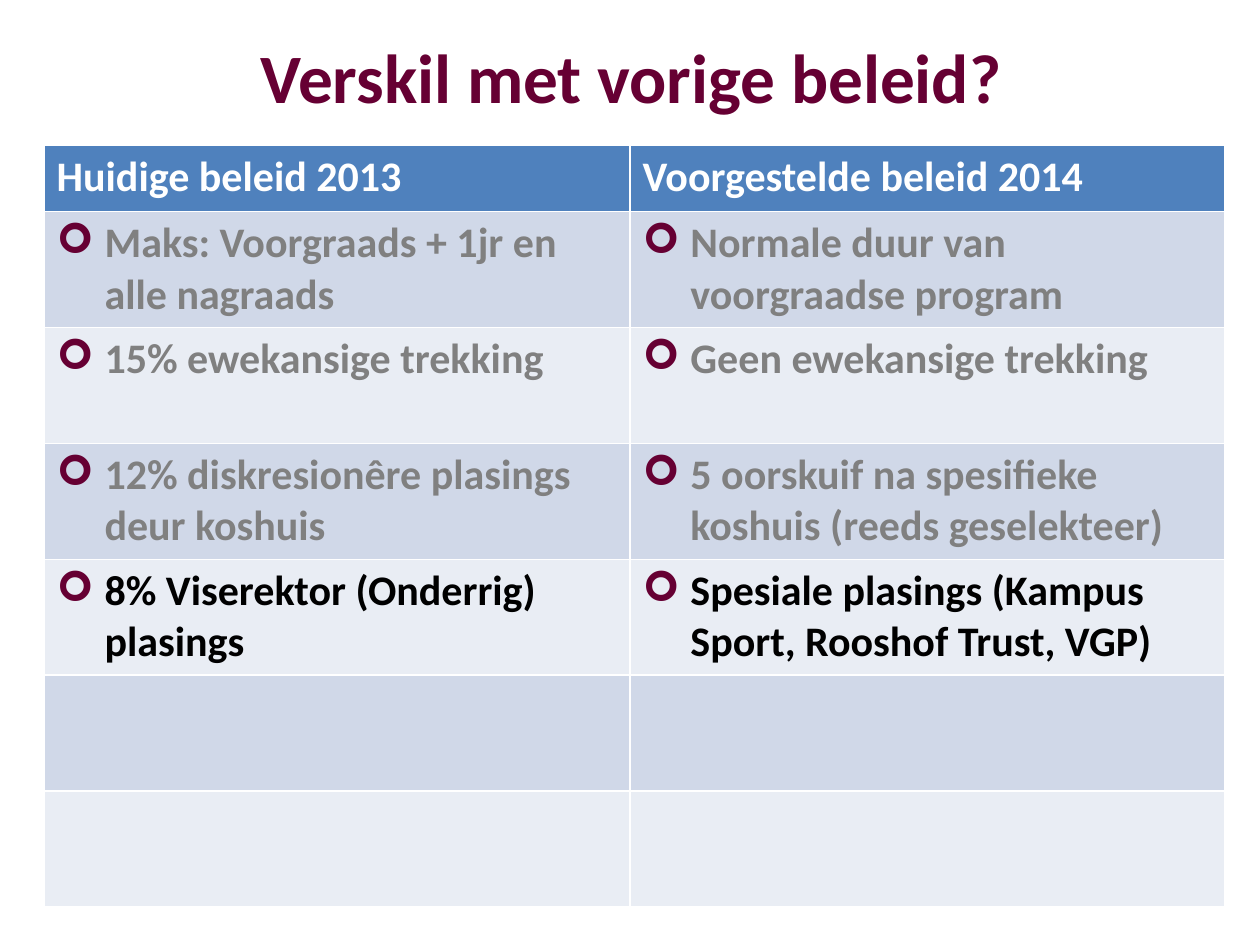
import pptx
import pptx.dml.color
import pptx.enum.text
import pptx.oxml.ns
import pptx.util
import lxml.etree

Inches = pptx.util.Inches

TITLE = "Verskil met vorige beleid?"
HEADINGS = ("Huidige beleid 2013", "Voorgestelde beleid 2014")
EARLIER = "808080"
CURRENT = "000000"
POLICIES = [
    ("Maks: Voorgraads + 1jr en alle nagraads", "Normale duur van voorgraadse program", EARLIER),
    ("15% ewekansige trekking", "Geen ewekansige trekking", EARLIER),
    ("12% diskresionêre plasings deur koshuis",
     "5 oorskuif na spesifieke koshuis (reeds geselekteer)", EARLIER),
    ("8% Viserektor (Onderrig) plasings",
     "Spesiale plasings (Kampus Sport, Rooshof Trust, VGP)", CURRENT),
    ("", "", CURRENT),
    ("", "", CURRENT),
]
MAROON = "660033"
HEADER_FILL = "4F81BD"
BAND_FILLS = ("D0D8E8", "E9EDF4")
COLUMN_WIDTHS = (4.65, 4.72)
HEADER_HEIGHT = 0.53
ROW_HEIGHT = 0.92
INDENT = 0.38


def colour(value):
    return pptx.dml.color.RGBColor.from_string(value)


def add_bullet(para):
    properties = para._p.get_or_add_pPr()
    properties.set("marL", str(Inches(INDENT)))
    properties.set("indent", str(-Inches(INDENT)))
    qn = pptx.oxml.ns.qn
    bullet_colour = lxml.etree.SubElement(properties, qn("a:buClr"))
    lxml.etree.SubElement(bullet_colour, qn("a:srgbClr"), val=MAROON)
    lxml.etree.SubElement(properties, qn("a:buFont"), typeface="Wingdings")
    lxml.etree.SubElement(properties, qn("a:buChar"), char="➢")


def write(frame, text, size=24, ink="FFFFFF", align=None, bullet=False):
    para = frame.paragraphs[0]
    para.alignment = align
    if bullet:
        add_bullet(para)
    span = para.add_run()
    span.text = text
    span.font.name = "Calibri"
    span.font.size = pptx.util.Pt(size)
    span.font.bold = True
    span.font.color.rgb = colour(ink)


def fill_cell(cell, shade, text, **style):
    cell.fill.solid()
    cell.fill.fore_color.rgb = colour(shade)
    if text:
        write(cell.text_frame, text, **style)


def main():
    deck = pptx.Presentation()
    deck.slide_width, deck.slide_height = Inches(10), Inches(7.5)
    page = deck.slides.add_slide(deck.slide_layouts[5])

    title = page.shapes.title
    title.left, title.top = Inches(0.51), Inches(0.21)
    title.width, title.height = Inches(9), Inches(0.79)
    title.text_frame.vertical_anchor = pptx.enum.text.MSO_ANCHOR.MIDDLE
    write(title.text_frame, TITLE, size=39.6, ink=MAROON,
          align=pptx.enum.text.PP_ALIGN.CENTER)

    heights = [HEADER_HEIGHT] + [ROW_HEIGHT] * len(POLICIES)
    table = page.shapes.add_table(
        len(heights), len(HEADINGS), Inches(0.35), Inches(1.15),
        Inches(sum(COLUMN_WIDTHS)), Inches(sum(heights))).table
    for column, width in zip(table.columns, COLUMN_WIDTHS):
        column.width = Inches(width)
    for row, height in zip(table.rows, heights):
        row.height = Inches(height)

    for column, heading in enumerate(HEADINGS):
        fill_cell(table.cell(0, column), HEADER_FILL, heading)
    for index, (*texts, ink) in enumerate(POLICIES):
        for column, text in enumerate(texts):
            fill_cell(table.cell(index + 1, column), BAND_FILLS[index % 2], text,
                      ink=ink, bullet=True)

    deck.save("out.pptx")


if __name__ == "__main__":
    main()
